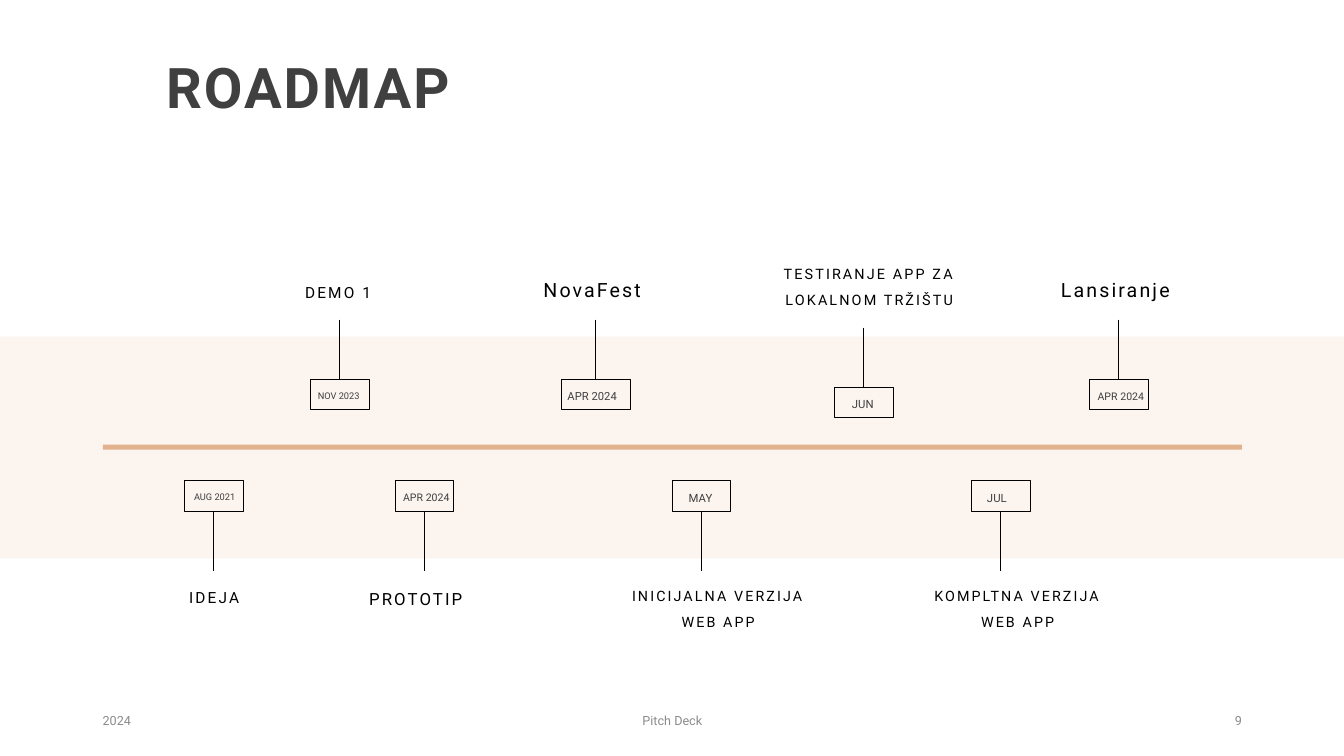
import pptx
import pptx.util
import pptx.oxml.ns
import pptx.dml.color
import pptx.enum.shapes
import pptx.enum.text
import lxml.etree

RGB = pptx.dml.color.RGBColor
SHAPE = pptx.enum.shapes.MSO_SHAPE
ALIGN = pptx.enum.text.PP_ALIGN
ANCHOR = pptx.enum.text.MSO_ANCHOR
Pt = pptx.util.Pt

BLACK = RGB(0x00, 0x00, 0x00)
DARK = RGB(0x40, 0x40, 0x40)
GREY = RGB(0x8B, 0x8B, 0x8B)
CREAM = RGB(0xFB, 0xF4, 0xEF)
TAN = RGB(0xE2, 0xB1, 0x8D)

# The grid has ten columns and ten rows to the inch
CELL = pptx.util.Inches(0.1)
COLS, ROWS = 133.33, 75

deck = pptx.Presentation()
deck.slide_width = int(COLS * CELL)
deck.slide_height = int(ROWS * CELL)
slide = deck.slides.add_slide(deck.slide_layouts[6])
shapes = slide.shapes


def add_rect(x, y, wide, high, fill=None):
    rect = shapes.add_shape(SHAPE.RECTANGLE, *[int(n * CELL) for n in (x, y, wide, high)])
    rect.shadow.inherit = False
    if fill is None:
        rect.fill.background()
        rect.line.color.rgb = BLACK
        rect.line.width = Pt(0.5)
    else:
        rect.fill.solid()
        rect.fill.fore_color.rgb = fill
        rect.line.fill.background()
    return rect


def add_text(text, x, y, wide, high, size, color, align=ALIGN.CENTER,
             anchor=ANCHOR.TOP, lead=1.0, before=0, track=0, bold=False):
    box = shapes.add_textbox(*[int(n * CELL) for n in (x, y, wide, high)])
    frame = box.text_frame
    frame.word_wrap = True
    frame.vertical_anchor = anchor
    para = frame.paragraphs[0]
    para.alignment = align
    para.line_spacing = lead
    para.space_before = Pt(before)
    run = para.add_run()
    run.text = text
    run.font.name = "Roboto"
    run.font.size = Pt(size)
    run.font.bold = bold
    run.font.color.rgb = color
    if track:
        run.font._element.set("spc", str(int(track * 100)))


# Band, time line and title
add_rect(0, 33.4, COLS, 22, CREAM)
add_rect(10.2, 44.1, 113, 0.5, TAN)
add_text("ROADMAP", 15.5, -2, 70.5, 14.5, 40, DARK, ALIGN.LEFT,
         ANCHOR.BOTTOM, lead=0.9, track=1.5, bold=True)

# Steps above the line: label, size, left, top; date, size, left, width; box left, top, width
above = [
    ("DEMO 1", 11, 22.3, 24.3, "NOV 2023", 6.6, 30.1, 7, 30.8, 37.6, 5.8),
    ("NovaFest", 14, 47.5, 24.3, "APR 2024", 8, 55, 7.5, 55.7, 37.6, 6.8),
    ("TESTIRANJE APP ZA LOKALNOM TRŽIŠTU", 10.3, 75, 25, "JUN", 8.1, 82.1, 7, 82.8, 38.4, 5.8),
    ("Lansiranje", 14, 99.4, 24.3, "APR 2024", 7.5, 107.7, 7, 108.1, 37.6, 5.8),
]
# Steps below the line, in the same order of fields
below = [
    ("IDEJA", 11, 10, 56.9, "AUG 2021", 6.6, 17.8, 7, 18.3, 47.7, 5.8),
    ("PROTOTIP", 12, 30, 56.9, "APR 2024", 7.5, 38.8, 7, 39.2, 47.7, 5.8),
    ("INICIJALNA VERZIJA WEB APP", 10.2, 60, 56.9, "MAY", 8.1, 66, 7, 66.7, 47.7, 5.8),
    ("KOMPLTNA VERZIJA WEB APP", 10.2, 89.7, 56.9, "JUL", 8.1, 95.4, 7, 96.4, 47.7, 5.8),
]
HIGH, STEM = 3, 5.9

for steps, anchor, side in ((above, ANCHOR.BOTTOM, 0), (below, ANCHOR.TOP, 2)):
    for label, size, x, y, date, small, left, span, edge, top, wide in steps:
        add_text(label, x, y, 22.5, 6.1, size, BLACK, anchor=anchor,
                 lead=1.5, before=10, track=1.5)
        add_text(date, left, top + 0.7, span, 2.2, small, DARK, lead=0.9, before=10)
        box = add_rect(edge, top, wide, HIGH)

        # Stem from the label to the box
        mid = int((edge + wide / 2) * CELL)
        tip = int((top - STEM if side == 0 else top + HIGH + STEM) * CELL)
        stem = shapes.add_connector(pptx.enum.shapes.MSO_CONNECTOR.STRAIGHT, mid, tip, mid, tip)
        stem.end_connect(box, side)
        stem.line.color.rgb = BLACK
        stem.line.width = Pt(0.75)
        lxml.etree.SubElement(stem._element.spPr, pptx.oxml.ns.qn("a:effectLst"))

# Footer
for text, x, wide, align in (("2024", 9.2, 30, ALIGN.LEFT),
                             ("Pitch Deck", 44.2, 45, ALIGN.CENTER),
                             ("9", 94.2, 30, ALIGN.RIGHT)):
    add_text(text, x, 69.5, wide, 4, 9, GREY, align, ANCHOR.MIDDLE)

deck.save("out.pptx")
